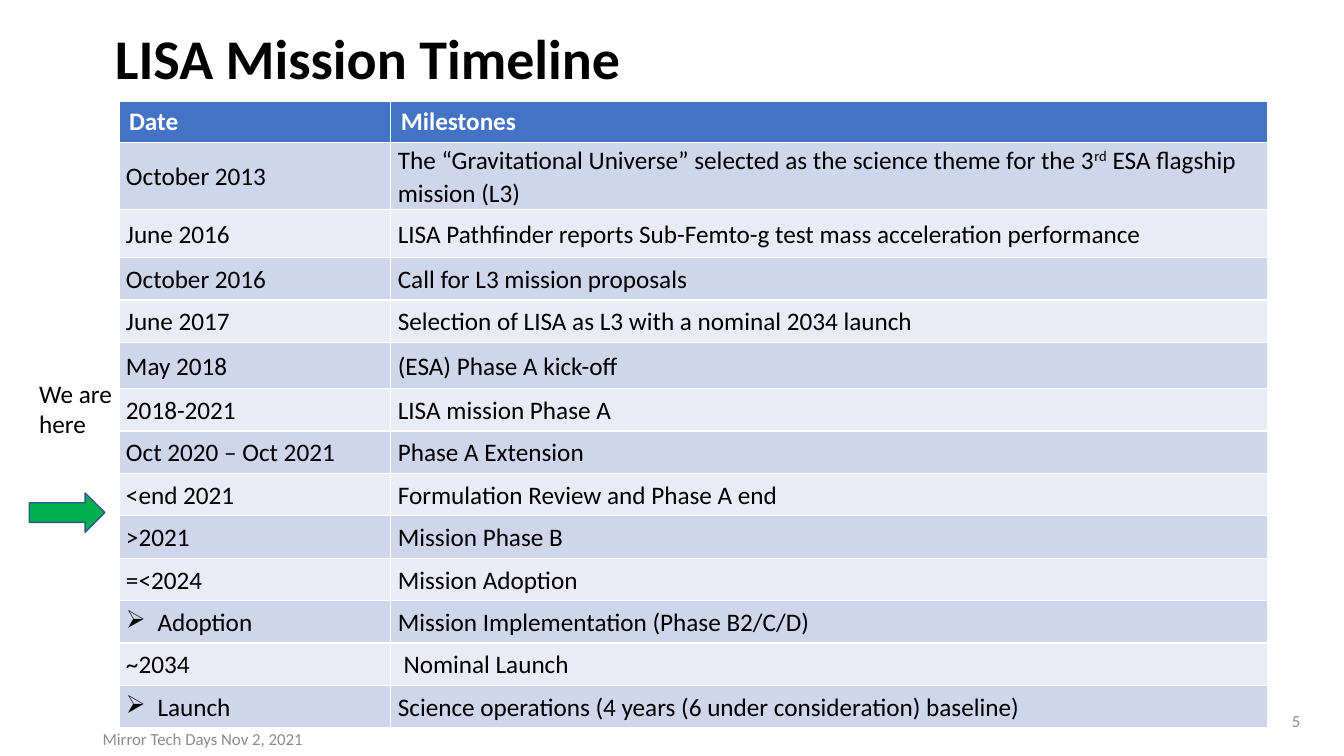
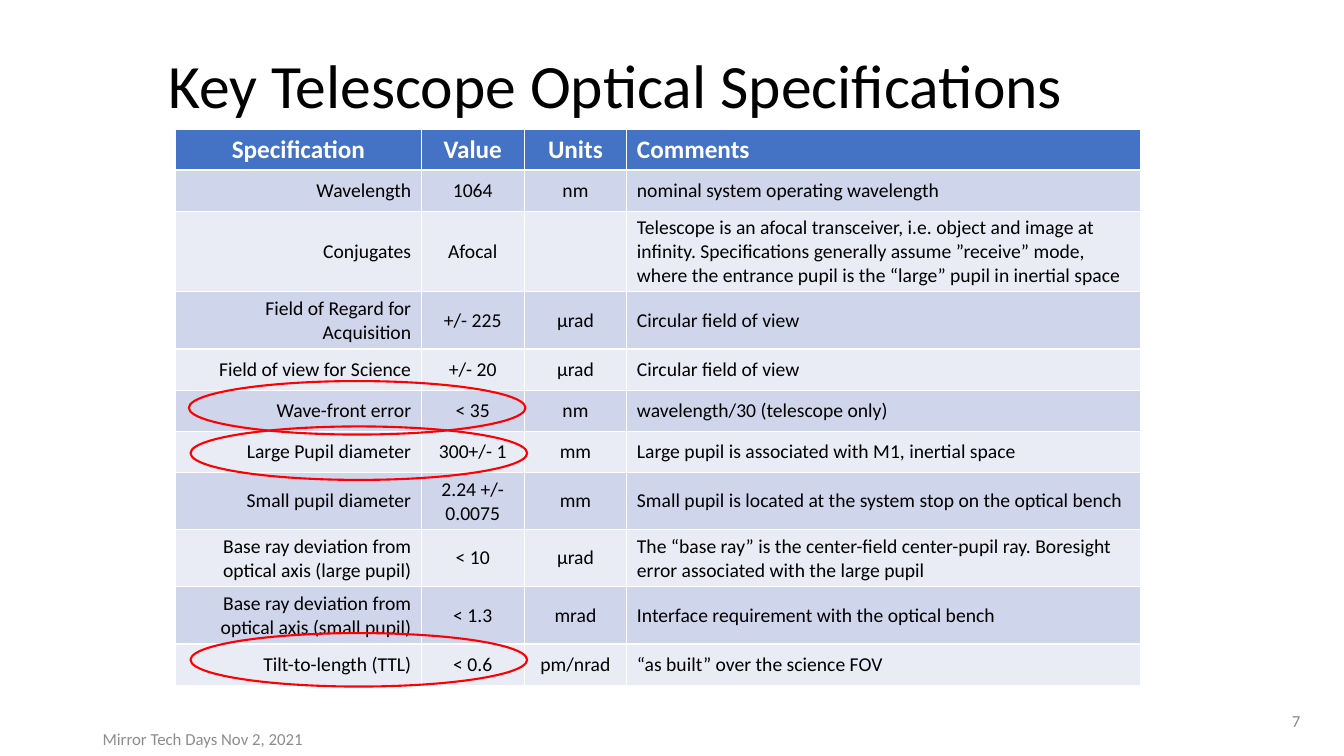
from dataclasses import dataclass

from lxml import etree
from pptx import Presentation
from pptx import presentation as prs
from pptx import slide as sl
from pptx import table as tb
from pptx import util as u
from pptx.dml import color
from pptx.enum import shapes, text
from pptx.oxml import ns
from pptx.text import text as tx

LEFT, CENTER, RIGHT = text.PP_ALIGN.LEFT, text.PP_ALIGN.CENTER, text.PP_ALIGN.RIGHT
TOP, MIDDLE = text.MSO_ANCHOR.TOP, text.MSO_ANCHOR.MIDDLE
TITLE_ONLY = 5


@dataclass(frozen=True)
class Theme:
    font: str = "Calibri"
    ink: str = "000000"
    muted: str = "8C8C8C"
    white: str = "FFFFFF"
    header: str = "4472C4"
    bands: tuple[str, str] = ("CFD5EA", "E9EBF5")
    arrow: str = "00B050"
    arrow_edge: str = "325491"
    highlight: str = "FF0000"
    heading_size: float = 18
    small_size: float = 14
    footer_size: float = 12


THEME = Theme()


@dataclass(frozen=True)
class Box:
    left: float
    top: float
    width: float
    height: float

    def emu(self) -> tuple[u.Length, ...]:
        return tuple(u.Pt(v) for v in (self.left, self.top, self.width, self.height))


@dataclass(frozen=True)
class Style:
    size: float
    ink: str = THEME.ink
    bold: bool = False
    align: text.PP_ALIGN = LEFT
    spacing: float | None = None


@dataclass(frozen=True)
class Column:
    heading: str
    width: float
    align: text.PP_ALIGN = LEFT


@dataclass(frozen=True)
class TableLook:
    size: float
    spacing: float | None = None
    margin_x: float = 7.2
    margin_y: float = 3.6


@dataclass(frozen=True)
class Row:
    cells: tuple[str, ...]
    height: float = 30.3
    bulleted: bool = False


HEADER_HEIGHT = 29.2
SPEC_HEIGHT = 29.4

TIMELINE_COLUMNS = (Column("Date", 194.2), Column("Milestones", 626.4))
MILESTONES = (
    Row(("October 2013", "The “Gravitational Universe” selected as the science theme "
         "for the 3^rd^ ESA flagship mission (L3)"), 47.5),
    Row(("June 2016", "LISA Pathfinder reports Sub-Femto-g test mass acceleration performance"), 34.6),
    Row(("October 2016", "Call for L3 mission proposals")),
    Row(("June 2017", "Selection of LISA as L3 with a nominal 2034 launch")),
    Row(("May 2018", "(ESA) Phase A kick-off"), 33.1),
    Row(("2018-2021", "LISA mission Phase A")),
    Row(("Oct 2020 – Oct 2021", "Phase A Extension")),
    Row(("<end 2021", "Formulation Review and Phase A end")),
    Row((">2021", "Mission Phase B")),
    Row(("=<2024", "Mission Adoption")),
    Row(("Adoption", "Mission Implementation (Phase B2/C/D)"), bulleted=True),
    Row(("~2034", " Nominal Launch")),
    Row(("Launch", "Science operations (4 years (6 under consideration) baseline)"), bulleted=True),
)

SPEC_COLUMNS = (
    Column("Specification", 175.7, RIGHT),
    Column("Value", 73.4, CENTER),
    Column("Units", 73.4, CENTER),
    Column("Comments", 367),
)
SPECIFICATIONS = tuple(Row(cells, SPEC_HEIGHT) for cells in (
    ("Wavelength", "1064", "nm", "nominal system operating wavelength"),
    ("Conjugates", "Afocal", "", "Telescope is an afocal transceiver, i.e. object and image at infinity. "
     "Specifications generally assume ”receive” mode, where the entrance pupil is the “large” pupil "
     "in inertial space"),
    ("Field of Regard for Acquisition", "+/- 225", "µrad", "Circular field of view"),
    ("Field of view for Science", "+/- 20", "µrad", "Circular field of view"),
    ("Wave-front error", "< 35", "nm", "wavelength/30 (telescope only)"),
    ("Large Pupil diameter", "300+/- 1", "mm", "Large pupil is associated with M1, inertial space"),
    ("Small pupil diameter", "2.24 +/- 0.0075", "mm",
     "Small pupil is located at the system stop on the optical bench"),
    ("Base ray deviation from optical axis (large pupil)", "< 10", "µrad",
     "The “base ray” is the center-field center-pupil ray. Boresight error associated with the large pupil"),
    ("Base ray deviation from optical axis (small pupil)", "< 1.3", "mrad",
     "Interface requirement with the optical bench"),
    ("Tilt-to-length (TTL)", "< 0.6", "pm/nrad", "“as built” over the science FOV"),
))
HIGHLIGHTS = tuple(Box(left, top, 240.5, 38.2)
                   for left, top in ((136.1, 304.6), (134.9, 272.2), (136.1, 452.2)))


def rgb(value: str) -> color.RGBColor:
    return color.RGBColor.from_string(value)


def write(paragraph: tx._Paragraph, content: str, style: Style) -> None:
    for index, part in enumerate(content.split("^")):
        if part:
            run = paragraph.add_run()
            run.text = part
            if index % 2:
                run.font._element.set("baseline", "30000")
    paragraph.alignment = style.align
    if style.spacing:
        paragraph.line_spacing = style.spacing
    font = paragraph.font
    font.name, font.size, font.bold = THEME.font, u.Pt(style.size), style.bold
    font.color.rgb = rgb(style.ink)


def add_bullet(paragraph: tx._Paragraph) -> None:
    properties = paragraph._p.get_or_add_pPr()
    properties.set("marL", str(u.Pt(22.5)))
    properties.set("indent", str(-u.Pt(22.5)))
    etree.SubElement(properties, ns.qn("a:buChar")).set("char", "➢")


def add_label(slide: sl.Slide, box: Box, content: str, style: Style,
              anchor: text.MSO_ANCHOR = MIDDLE) -> None:
    frame = slide.shapes.add_textbox(*box.emu()).text_frame
    frame.word_wrap = True
    frame.vertical_anchor = anchor
    write(frame.paragraphs[0], content, style)


def add_outlined(slide: sl.Slide, preset: shapes.MSO_SHAPE, box: Box,
                 edge: str, weight: float, fill: str | None = None) -> None:
    shape = slide.shapes.add_shape(preset, *box.emu())
    shape.shadow.inherit = False
    if fill:
        shape.fill.solid()
        shape.fill.fore_color.rgb = rgb(fill)
    else:
        shape.fill.background()
    shape.line.color.rgb = rgb(edge)
    shape.line.width = u.Pt(weight)


def fill_cell(cell: tb._Cell, fill: str, anchor: text.MSO_ANCHOR) -> tx._Paragraph:
    cell.fill.solid()
    cell.fill.fore_color.rgb = rgb(fill)
    cell.vertical_anchor = anchor
    return cell.text_frame.paragraphs[0]


def add_banded_table(slide: sl.Slide, left: float, top: float, columns: tuple[Column, ...],
                     rows: tuple[Row, ...], look: TableLook) -> None:
    heights = (HEADER_HEIGHT, *(row.height for row in rows))
    box = Box(left, top, sum(column.width for column in columns), sum(heights))
    table = slide.shapes.add_table(len(heights), len(columns), *box.emu()).table
    for table_row, height in zip(table.rows, heights):
        table_row.height = u.Pt(height)
    for c, column in enumerate(columns):
        table.columns[c].width = u.Pt(column.width)
        heading_align = LEFT if column.align == LEFT else CENTER
        write(fill_cell(table.cell(0, c), THEME.header, TOP), column.heading,
              Style(THEME.heading_size, THEME.white, True, heading_align))
        for r, row in enumerate(rows):
            cell = table.cell(r + 1, c)
            paragraph = fill_cell(cell, THEME.bands[r % 2], MIDDLE)
            cell.margin_left = cell.margin_right = u.Pt(look.margin_x)
            cell.margin_top = cell.margin_bottom = u.Pt(look.margin_y)
            if row.bulleted and c == 0:
                add_bullet(paragraph)
            write(paragraph, row.cells[c],
                  Style(look.size, align=column.align, spacing=look.spacing))


def add_slide(deck: prs.Presentation, title: str, title_box: Box, title_style: Style,
              number: int) -> sl.Slide:
    slide = deck.slides.add_slide(deck.slide_layouts[TITLE_ONLY])
    heading = slide.shapes.title
    heading.left, heading.top, heading.width, heading.height = title_box.emu()
    frame = heading.text_frame
    frame.auto_size = text.MSO_AUTO_SIZE.NONE
    frame.vertical_anchor = MIDDLE
    write(frame.paragraphs[0], title, title_style)
    add_label(slide, Box(720, 500.4, 216, 28.8), str(number),
              Style(THEME.footer_size, THEME.muted, align=RIGHT))
    add_label(slide, Box(66.2, 513.4, 216, 28.8), "Mirror Tech Days Nov 2, 2021",
              Style(THEME.footer_size, THEME.muted))
    return slide


def build_timeline(deck: prs.Presentation) -> None:
    slide = add_slide(deck, "LISA Mission Timeline", Box(74.9, -8.6, 398.2, 104.4),
                      Style(40, bold=True, spacing=0.9), 5)
    add_banded_table(slide, 85, 72.7, TIMELINE_COLUMNS, MILESTONES,
                     TableLook(THEME.heading_size, 1.07, 5, 0))
    add_outlined(slide, shapes.MSO_SHAPE.RIGHT_ARROW, Box(20.9, 352.1, 54, 28.1),
                 THEME.arrow_edge, 1, THEME.arrow)
    add_label(slide, Box(20.9, 266.4, 66.2, 72.7), "We are here", Style(THEME.heading_size), TOP)


def build_specifications(deck: prs.Presentation) -> None:
    slide = add_slide(deck, "Key Telescope Optical Specifications", Box(113, 10.8, 828, 104.4),
                      Style(44, spacing=0.9), 7)
    add_banded_table(slide, 125.3, 92.2, SPEC_COLUMNS, SPECIFICATIONS, TableLook(THEME.small_size))
    for highlight in HIGHLIGHTS:
        add_outlined(slide, shapes.MSO_SHAPE.OVAL, highlight, THEME.highlight, 1.5)


def main() -> None:
    deck = Presentation()
    deck.slide_width, deck.slide_height = u.Pt(960), u.Pt(540)
    build_timeline(deck)
    build_specifications(deck)
    deck.save("out.pptx")


if __name__ == "__main__":
    main()
